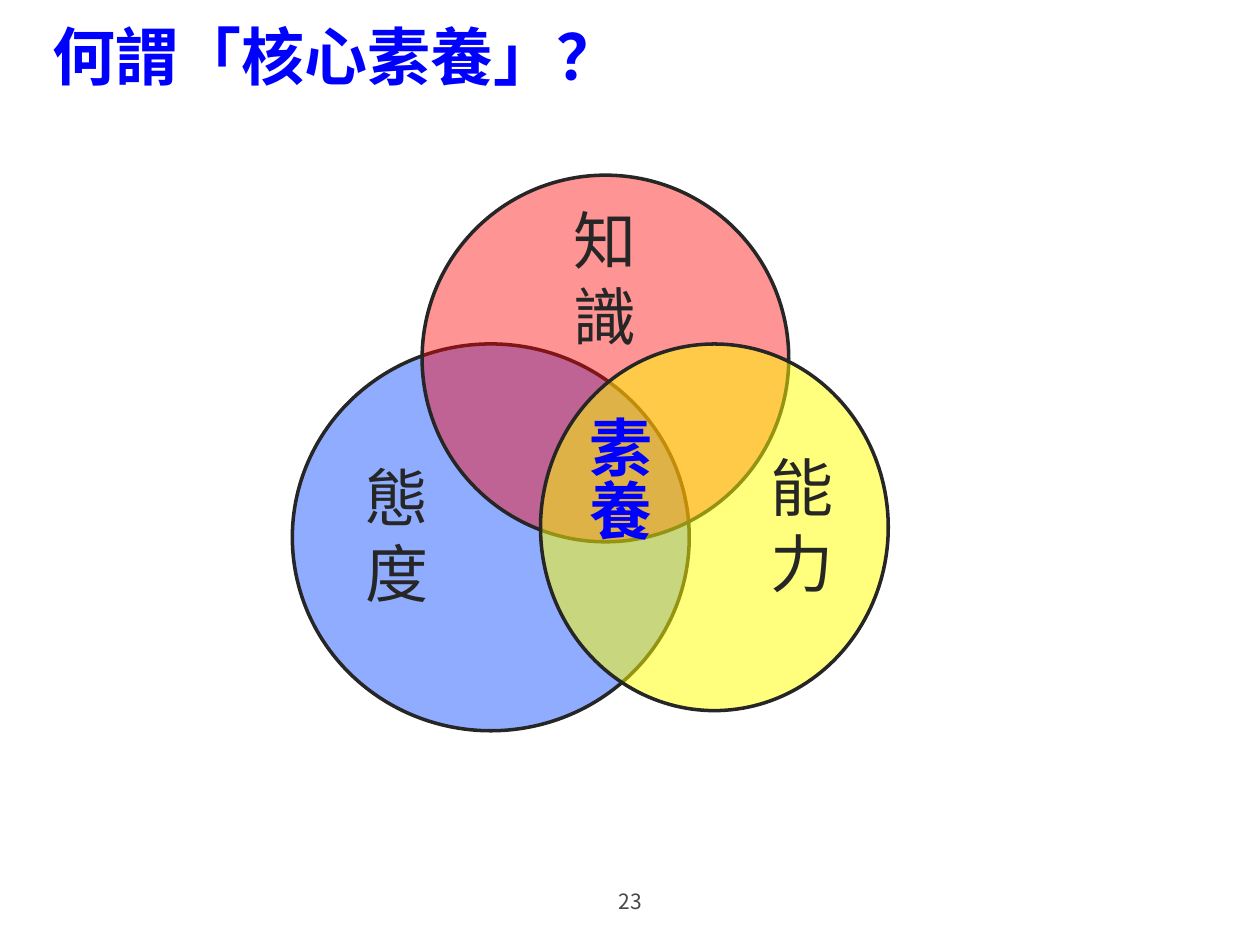
from dataclasses import dataclass

from lxml import etree
from pptx import Presentation
from pptx.dml.color import RGBColor
from pptx.enum.shapes import MSO_SHAPE
from pptx.enum.text import MSO_ANCHOR, PP_ALIGN
from pptx.oxml.ns import qn
from pptx.util import Inches, Pt

OVAL = MSO_SHAPE.OVAL
MIDDLE, TOP = MSO_ANCHOR.MIDDLE, MSO_ANCHOR.TOP
CENTER, LEFT = PP_ALIGN.CENTER, PP_ALIGN.LEFT


@dataclass(frozen=True)
class Theme:
    ink: str = "262626"
    accent: str = "0000FF"
    muted: str = "474747"
    heading_font: str = "Noto Sans CJK SC"
    label_font: str = "Calibri"
    core_font: str = "Roboto"
    large: int = 36
    small: int = 12
    outline: int = 2


T = Theme()
SLIDE = (10, 7.5)
LABEL_SIZE = (1.18, 1.31)
TITLE = ("何謂「核心素養」？", (-1.83, -0.06, 9, 0.99))
PAGE = ("23", (3.42, 6.95, 3.17, 0.4))
CORE = ("素養", (4.45, 3.2, 0.81, 1.26))
CIRCLES = [
    ((2.32, 2.73, 3.15, 3.07), "3366FF", 54),
    ((3.35, 1.39, 2.91, 2.91), "FF0000", 42),
    ((4.29, 2.73, 2.76, 2.91), "FFFF00", 51),
]
LABELS = [("知識", (4.45, 1.55)), ("能力", (6.02, 3.51)), ("態度", (2.8, 3.59))]


def place(shape, box):
    """Set the position and size of a shape in inches."""
    shape.left, shape.top, shape.width, shape.height = map(Inches, box)


def write(shape, text, font, size, color, bold=False, align=LEFT, anchor=TOP):
    """Fill a shape with one formatted paragraph."""
    tf = shape.text_frame
    tf.word_wrap = True
    tf.vertical_anchor = anchor
    p = tf.paragraphs[0]
    p.text = text
    p.alignment = align
    f = p.font
    f.name, f.size, f.bold = font, Pt(size), bold
    f.color.rgb = RGBColor.from_string(color)
    latin = p._p.find(".//" + qn("a:latin"))
    ea = etree.Element(qn("a:ea"), typeface=font)
    latin.addnext(ea)


def add_text(s, box, *args, **kwargs):
    """Add a text box holding one formatted paragraph."""
    tb = s.shapes.add_textbox(*map(Inches, box))
    write(tb, *args, **kwargs)
    return tb


def add_circle(s, box, color, opacity):
    """Add a translucent outlined ellipse."""
    sp = s.shapes.add_shape(OVAL, *map(Inches, box))
    sp.shadow.inherit = False
    sp.fill.solid()
    sp.fill.fore_color.rgb = RGBColor.from_string(color)
    srgb = sp._element.spPr.find(qn("a:solidFill")).find(qn("a:srgbClr"))
    etree.SubElement(srgb, qn("a:alpha"), val=str(opacity * 1000))
    sp.line.color.rgb = RGBColor.from_string(T.ink)
    sp.line.width = Pt(T.outline)


def main():
    """Build the three-circle diagram slide."""
    prs = Presentation()
    prs.slide_width, prs.slide_height = map(Inches, SLIDE)
    s = prs.slides.add_slide(prs.slide_layouts[5])

    text, box = TITLE
    place(s.shapes.title, box)
    write(s.shapes.title, text, T.heading_font, T.large, T.accent,
          bold=True, align=CENTER, anchor=MIDDLE)
    text, box = PAGE
    add_text(s, box, text, T.heading_font, T.small, T.muted,
             align=CENTER, anchor=MIDDLE)

    for circle in CIRCLES:
        add_circle(s, *circle)
    for text, corner in LABELS:
        add_text(s, corner + LABEL_SIZE, text, T.label_font, T.large, T.ink)

    text, box = CORE
    core = add_text(s, box, text, T.core_font, T.large, T.accent, bold=True)
    core.text_frame._txBody.bodyPr.set("vert", "eaVert")
    prs.save("out.pptx")


if __name__ == "__main__":
    main()
